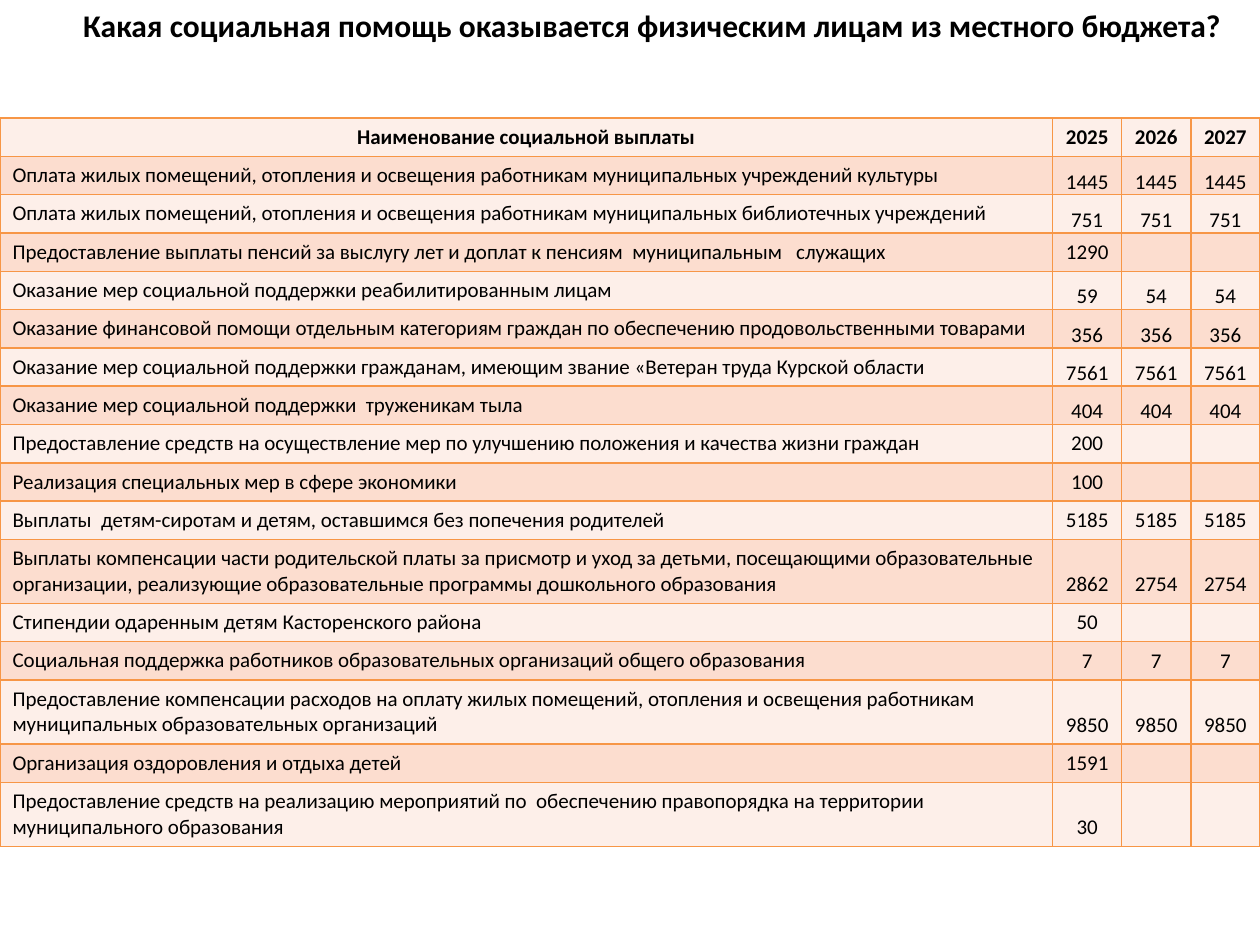
from dataclasses import dataclass

from lxml import etree
from pptx import Presentation
from pptx.dml.color import RGBColor
from pptx.enum.text import MSO_ANCHOR, MSO_AUTO_SIZE, PP_ALIGN
from pptx.oxml.ns import qn
from pptx.util import Pt

CENTER, LEFT = PP_ALIGN.CENTER, PP_ALIGN.LEFT
TOP, BOTTOM = MSO_ANCHOR.TOP, MSO_ANCHOR.BOTTOM
NO_AUTOFIT = MSO_AUTO_SIZE.NONE


@dataclass(frozen=True)
class Theme:
    font: str = "Calibri"
    title_size: float = 18
    table_size: float = 12
    text: str = "000000"
    border: str = "F79646"
    bands: tuple = ("FDEFE9", "FCDDCF")
    border_width: float = 1


THEME = Theme()
TITLE = "Какая социальная помощь оказывается физическим лицам из местного бюджета?"
HEADER = ("Наименование социальной выплаты", "2025", "2026", "2027")
TITLE_BOX = (22.5, 0, 697.5, 22.5)
TABLE_BOX = (0, 67.5, 720, 416.4)
YEAR_WIDTH = 39.5
ROW_HEIGHT, TALL_ROW_HEIGHT = 21.9, 36.6
TIGHT_MARGINS = {"margin_left": Pt(0.7), "margin_right": Pt(0.7),
                 "margin_top": Pt(0.7), "margin_bottom": Pt(0)}

# Payment name, yearly amounts
PAYMENTS = [
    ("Оплата жилых помещений, отопления и освещения работникам муниципальных учреждений культуры",
     "1445", "1445", "1445"),
    ("Оплата жилых помещений, отопления и освещения работникам муниципальных библиотечных учреждений",
     "751", "751", "751"),
    ("Предоставление выплаты пенсий за выслугу лет и доплат к пенсиям  муниципальным   служащих",
     "1290", "", ""),
    ("Оказание мер социальной поддержки реабилитированным лицам", "59", "54", "54"),
    ("Оказание финансовой помощи отдельным категориям граждан по обеспечению продовольственными товарами",
     "356", "356", "356"),
    ("Оказание мер социальной поддержки гражданам, имеющим звание «Ветеран труда Курской области",
     "7561", "7561", "7561"),
    ("Оказание мер социальной поддержки  труженикам тыла", "404", "404", "404"),
    ("Предоставление средств на осуществление мер по улучшению положения и качества жизни граждан",
     "200", "", ""),
    ("Реализация специальных мер в сфере экономики", "100", "", ""),
    ("Выплаты  детям-сиротам и детям, оставшимся без попечения родителей",
     "5185", "5185", "5185"),
    ("Выплаты компенсации части родительской платы за присмотр и уход за детьми, посещающими "
     "образовательные организации, реализующие образовательные программы дошкольного образования",
     "2862", "2754", "2754"),
    ("Стипендии одаренным детям Касторенского района", "50", "", ""),
    ("Социальная поддержка работников образовательных организаций общего образования",
     "7", "7", "7"),
    ("Предоставление компенсации расходов на оплату жилых помещений, отопления и освещения "
     "работникам муниципальных образовательных организаций", "9850", "9850", "9850"),
    ("Организация оздоровления и отдыха детей", "1591", "", ""),
    ("Предоставление средств на реализацию мероприятий по  обеспечению правопорядка на территории "
     "муниципального образования", "30", "", ""),
]
TIGHT_ROWS = {1, 2, 4, 5, 6, 7}
TALL_ROWS = {11, 14, 16}


def apply_format(target, values):
    for name, value in values.items():
        setattr(target, name, value)


def write_text(paragraph, text, size, bold, alignment):
    paragraph.alignment = alignment
    if text:
        run = paragraph.add_run()
        run.text = text
        apply_format(run.font, {"name": THEME.font, "size": Pt(size), "bold": bold})
        run.font.color.rgb = RGBColor.from_string(THEME.text)
    else:
        # Keeps an empty cell at the height of the table's type size
        etree.SubElement(paragraph._p, qn("a:endParaRPr"), sz=str(int(size * 100)))


def add_title(slide, box):
    title = slide.shapes.title
    left, top, width, height = map(Pt, box)
    apply_format(title, {"left": left, "top": top, "width": width, "height": height})
    apply_format(title.text_frame, {"word_wrap": True, "auto_size": NO_AUTOFIT,
                                    "vertical_anchor": TOP})
    paragraph = title.text_frame.paragraphs[0]
    write_text(paragraph, TITLE, THEME.title_size, True, CENTER)
    paragraph.space_before = Pt(THEME.title_size * 0.2)
    properties = paragraph._p.get_or_add_pPr()
    properties.set("marL", str(Pt(33)))
    properties.set("indent", str(Pt(-30)))


def add_borders(cell):
    properties = cell._tc.get_or_add_tcPr()
    for index, side in enumerate(("lnL", "lnR", "lnT", "lnB")):
        line = etree.Element(qn(f"a:{side}"), w=str(Pt(THEME.border_width)))
        fill = etree.SubElement(line, qn("a:solidFill"))
        etree.SubElement(fill, qn("a:srgbClr"), val=THEME.border)
        properties.insert(index, line)


def fill_cell(cell, text, row, column):
    is_header, is_amount = row == 0, column > 0
    cell.fill.solid()
    cell.fill.fore_color.rgb = RGBColor.from_string(THEME.bands[row % 2])
    add_borders(cell)
    cell.vertical_anchor = BOTTOM if is_amount and not is_header else TOP
    if is_amount and row in TIGHT_ROWS:
        apply_format(cell, TIGHT_MARGINS)
    write_text(cell.text_frame.paragraphs[0], text, THEME.table_size, is_header,
               CENTER if is_header or is_amount else LEFT)


def add_payment_table(slide, box):
    rows = [HEADER, *PAYMENTS]
    table = slide.shapes.add_table(len(rows), len(HEADER), *map(Pt, box)).table
    # Year columns share one width; the name column takes the rest
    years = len(HEADER) - 1
    widths = [box[2] - years * YEAR_WIDTH] + [YEAR_WIDTH] * years
    for column, width in zip(table.columns, widths):
        column.width = Pt(width)
    for row, texts in enumerate(rows):
        table.rows[row].height = Pt(TALL_ROW_HEIGHT if row in TALL_ROWS else ROW_HEIGHT)
        for column, text in enumerate(texts):
            fill_cell(table.cell(row, column), text, row, column)


def main():
    presentation = Presentation()
    apply_format(presentation, {"slide_width": Pt(720), "slide_height": Pt(540)})
    title_only = presentation.slide_layouts[5]
    slide = presentation.slides.add_slide(title_only)
    add_title(slide, TITLE_BOX)
    add_payment_table(slide, TABLE_BOX)
    presentation.save("out.pptx")


if __name__ == "__main__":
    main()
